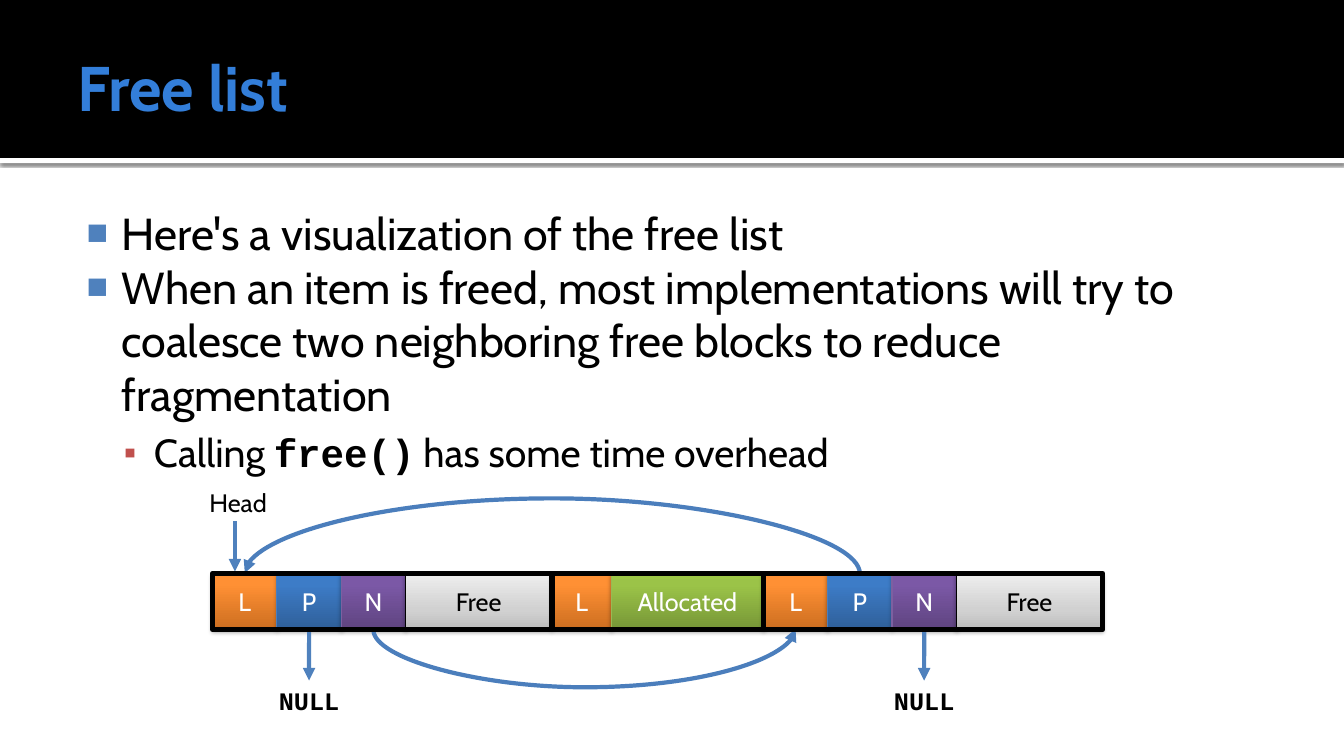
import dataclasses

import lxml.etree
import pptx
import pptx.dml.color
import pptx.enum.shapes
import pptx.enum.text
import pptx.oxml.ns
import pptx.util

Cm, Pt = pptx.util.Cm, pptx.util.Pt
SHAPE = pptx.enum.shapes.MSO_SHAPE
LINK = pptx.enum.shapes.MSO_CONNECTOR
ALIGN = pptx.enum.text.PP_ALIGN
ANCHOR = pptx.enum.text.MSO_ANCHOR
qn = pptx.oxml.ns.qn


@dataclasses.dataclass(frozen=True)
class Theme:
    font: str = "Cabin"
    mono: str = "Courier New"
    title_size: int = 45
    body_size: int = 32
    sub_size: int = 28
    label_size: int = 18
    black: str = "000000"
    white: str = "FFFFFF"
    title: str = "337ED9"
    bullet: str = "4F81BD"
    sub_bullet: str = "C0504D"
    arrow: str = "4F81BD"
    curve: str = "4B7EBC"


@dataclasses.dataclass(frozen=True)
class CellStyle:
    stops: tuple  # (percent, colour), bottom to top
    line: str
    text: str = "FFFFFF"


THEME = Theme()
STYLES = {
    "L": CellStyle(((0, "CC6E20"), (80, "FF9034"), (100, "FF9136")), "F69240"),
    "P": CellStyle(((0, "2F5F99"), (80, "3D7CC7"), (100, "3A7CCB")), "4B7EBC"),
    "N": CellStyle(((0, "5F4480"), (80, "7B58A6"), (100, "7C57A8")), "7D60A0"),
    "Free": CellStyle(((0, "BDBDBD"), (35, "D1D1D1"), (100, "EEEEEE")), "000000", "000000"),
    "Allocated": CellStyle(((0, "779737"), (80, "9BC348"), (100, "9DC746")), "98B955"),
}
FREE_BLOCK = (("L", 1.62), ("P", 1.62), ("N", 1.62), ("Free", 3.69))
USED_BLOCK = (("L", 1.5), ("Allocated", 3.83))
MEMORY_LEFT, MEMORY_TOP, MEMORY_HEIGHT = 5.36, 14.45, 1.41
LABEL_WIDTH, LABEL_HEIGHT = 2.8, 1.02
NULL_TOP = 17.15


def rgb(value):
    return pptx.dml.color.RGBColor.from_string(value)


def add_xml(parent, tag, **attributes):
    return lxml.etree.SubElement(parent, qn(tag), attributes)


def add_text(p, text, size, color=THEME.black, font=THEME.font, bold=False):
    r = p.add_run()
    r.text = text
    r.font.size, r.font.name, r.font.bold = Pt(size), font, bold
    r.font.color.rgb = rgb(color)


def set_frame(tf, insets=(0.25, 0.13, 0.25, 0.13), anchor=ANCHOR.TOP):
    tf.word_wrap = True
    tf.auto_size = pptx.enum.text.MSO_AUTO_SIZE.NONE
    tf.vertical_anchor = anchor
    tf.margin_left, tf.margin_top, tf.margin_right, tf.margin_bottom = map(Cm, insets)


def place(sp, left, top, width, height):
    sp.left, sp.top, sp.width, sp.height = map(Cm, (left, top, width, height))


def add_rect(slide, left, top, width, height, fill=None, line=None, weight=0.75):
    sp = slide.shapes.add_shape(SHAPE.RECTANGLE, *map(Cm, (left, top, width, height)))
    sp.shadow.inherit = False
    if fill:
        sp.fill.solid()
        sp.fill.fore_color.rgb = rgb(fill)
    else:
        sp.fill.background()
    if line:
        sp.line.color.rgb, sp.line.width = rgb(line), Pt(weight)
    else:
        sp.line.fill.background()
    return sp


def add_shadow(sp, opacity, blur, distance):
    effects = sp._element.spPr.find(qn("a:effectLst"))
    shadow = add_xml(effects, "a:outerShdw", blurRad=str(Pt(blur)), dist=str(Pt(distance)),
                     dir="5400000", rotWithShape="0")
    color = add_xml(shadow, "a:srgbClr", val=THEME.black)
    add_xml(color, "a:alpha", val=str(opacity * 1000))


def set_gradient(sp, stops):
    sp.fill.gradient()
    sp.fill.gradient_angle = 90
    stop_list = sp._element.spPr.find(qn("a:gradFill")).find(qn("a:gsLst"))
    for old in list(stop_list):
        stop_list.remove(old)
    for percent, color in stops:
        add_xml(add_xml(stop_list, "a:gs", pos=str(percent * 1000)), "a:srgbClr", val=color)


def add_header(slide):
    strip = add_rect(slide, 0, 3.98, 33.87, 0.13, THEME.white)
    add_shadow(strip, 60, 2.5, 0.8)
    band = add_rect(slide, 0, 0, 33.87, 3.98, THEME.black)
    for sp in (band, strip):  # behind the placeholders
        slide.shapes._spTree.insert(2, sp._element)


def add_bullet(p, char, color, percent, left, hanging):
    p_pr = p._p.get_or_add_pPr()
    p_pr.set("marL", str(Cm(left)))
    p_pr.set("indent", str(Cm(-hanging)))
    add_xml(add_xml(p_pr, "a:buClr"), "a:srgbClr", val=color)
    add_xml(p_pr, "a:buSzPct", val=str(percent * 1000))
    add_xml(p_pr, "a:buChar", char=char)


def fill_title(sp, text):
    place(sp, 1.7, 0.43, 30.48, 3.48)
    set_frame(sp.text_frame, (0.25, 0.13, 0.13, 0.13), ANCHOR.MIDDLE)
    p = sp.text_frame.paragraphs[0]
    p.alignment = ALIGN.LEFT
    add_text(p, text, THEME.title_size, THEME.title, bold=True)


def fill_body(sp, items, sub_parts):
    place(sp, 1.7, 4.93, 30.48, 12.85)
    tf = sp.text_frame
    set_frame(tf, (0.15, 0.25, 0.25, 0.13))
    for i, text in enumerate(items):
        p = tf.add_paragraph() if i else tf.paragraphs[0]
        add_bullet(p, "■", THEME.bullet, 80, 1.22, 0.89)
        p.space_before = Pt(0)
        add_text(p, text, THEME.body_size)
    p = tf.add_paragraph()
    p.level = 1
    add_bullet(p, "▪", THEME.sub_bullet, 90, 2.03, 0.76)
    p.space_before = Pt(5.6)
    for text, is_code in sub_parts:
        add_text(p, text, THEME.sub_size, font=THEME.mono if is_code else THEME.font, bold=is_code)


def add_label(slide, text, center, top, **text_format):
    sp = slide.shapes.add_textbox(*map(Cm, (center - LABEL_WIDTH / 2, top, LABEL_WIDTH, LABEL_HEIGHT)))
    set_frame(sp.text_frame)
    p = sp.text_frame.paragraphs[0]
    p.alignment = ALIGN.CENTER
    add_text(p, text, THEME.label_size, **text_format)
    return sp


def add_block(slide, left, cells):
    """Draw a row of cells and return them by name."""
    shapes = {}
    for name, width in cells:
        style = STYLES[name]
        sp = add_rect(slide, left, MEMORY_TOP, width, MEMORY_HEIGHT, line=style.line)
        set_gradient(sp, style.stops)
        add_shadow(sp, 35, 3.1, 1.8)
        set_frame(sp.text_frame, anchor=ANCHOR.MIDDLE)
        p = sp.text_frame.paragraphs[0]
        p.alignment = ALIGN.CENTER
        add_text(p, name, THEME.label_size, style.text)
        shapes[name] = sp
        left += width
    return shapes


def add_arrow(slide, kind, color, start=(0, 0), end=(0, 0)):
    sp = slide.shapes.add_connector(kind, *map(Cm, start + end))
    sp.line.color.rgb, sp.line.width = rgb(color), Pt(3)
    add_xml(sp.line._get_or_add_ln(), "a:tailEnd", type="triangle")
    add_xml(sp._element.spPr, "a:effectLst")
    return sp


def add_null(slide, cell):
    label = add_label(slide, "NULL", (cell.left + cell.width / 2) / Cm(1), NULL_TOP,
                      font=THEME.mono, bold=True)
    sp = add_arrow(slide, LINK.STRAIGHT, THEME.arrow)
    sp.begin_connect(cell, 2)
    sp.end_connect(label, 0)


def add_curve(slide, source, target, side, bow, rotation, flip_h):
    """Bow a curve from one cell to another, both on the same side."""
    sp = add_arrow(slide, LINK.CURVE, THEME.curve)
    sp.begin_connect(source, side)
    sp.end_connect(target, side)
    middle, span, y = (sp.begin_x + sp.end_x) / 2, abs(sp.end_x - sp.begin_x), sp.begin_y
    depth = Cm(0.02)
    sp.left, sp.top = int(middle - depth / 2), int(y - span / 2)
    sp.width, sp.height = depth, span
    xfrm = sp._element.spPr.find(qn("a:xfrm"))
    for name, value in (("rot", rotation * 60000), ("flipH", int(flip_h)), ("flipV", 1)):
        xfrm.set(name, str(value))
    guides = sp._element.spPr.find(qn("a:prstGeom")).find(qn("a:avLst"))
    add_xml(guides, "a:gd", name="adj1", fmla=f"val {round(Cm(bow) / depth * 100000)}")


def add_memory(slide):
    blocks, outlines, left = [], [], MEMORY_LEFT
    for cells in (FREE_BLOCK, USED_BLOCK, FREE_BLOCK):
        width = sum(w for _, w in cells)
        blocks.append(add_block(slide, left, cells))
        outlines.append((left, width))
        left += width
    first, _, last = blocks
    add_label(slide, "Head", 6, 12.14)
    add_arrow(slide, LINK.STRAIGHT, THEME.arrow, (5.92, 13.13), (5.92, 14.4))
    add_curve(slide, last["P"], first["L"], 0, 1.9, 270, False)
    add_curve(slide, first["N"], last["L"], 2, -1.45, 90, True)
    add_null(slide, first["P"])
    add_null(slide, last["N"])
    for left, width in outlines:
        add_rect(slide, left, MEMORY_TOP, width, MEMORY_HEIGHT, line=THEME.black, weight=4)


def main():
    prs = pptx.Presentation()
    prs.slide_width, prs.slide_height = Cm(33.87), Cm(19.05)
    slide = prs.slides.add_slide(prs.slide_layouts[1])
    add_header(slide)
    fill_title(slide.shapes.title, "Free list")
    fill_body(
        slide.placeholders[1],
        ("Here's a visualization of the free list",
         "When an item is freed, most implementations will try to coalesce two "
         "neighboring free blocks to reduce fragmentation"),
        (("Calling ", False), ("free()", True), (" has some time overhead", False)),
    )
    add_memory(slide)
    prs.save("out.pptx")


if __name__ == "__main__":
    main()
